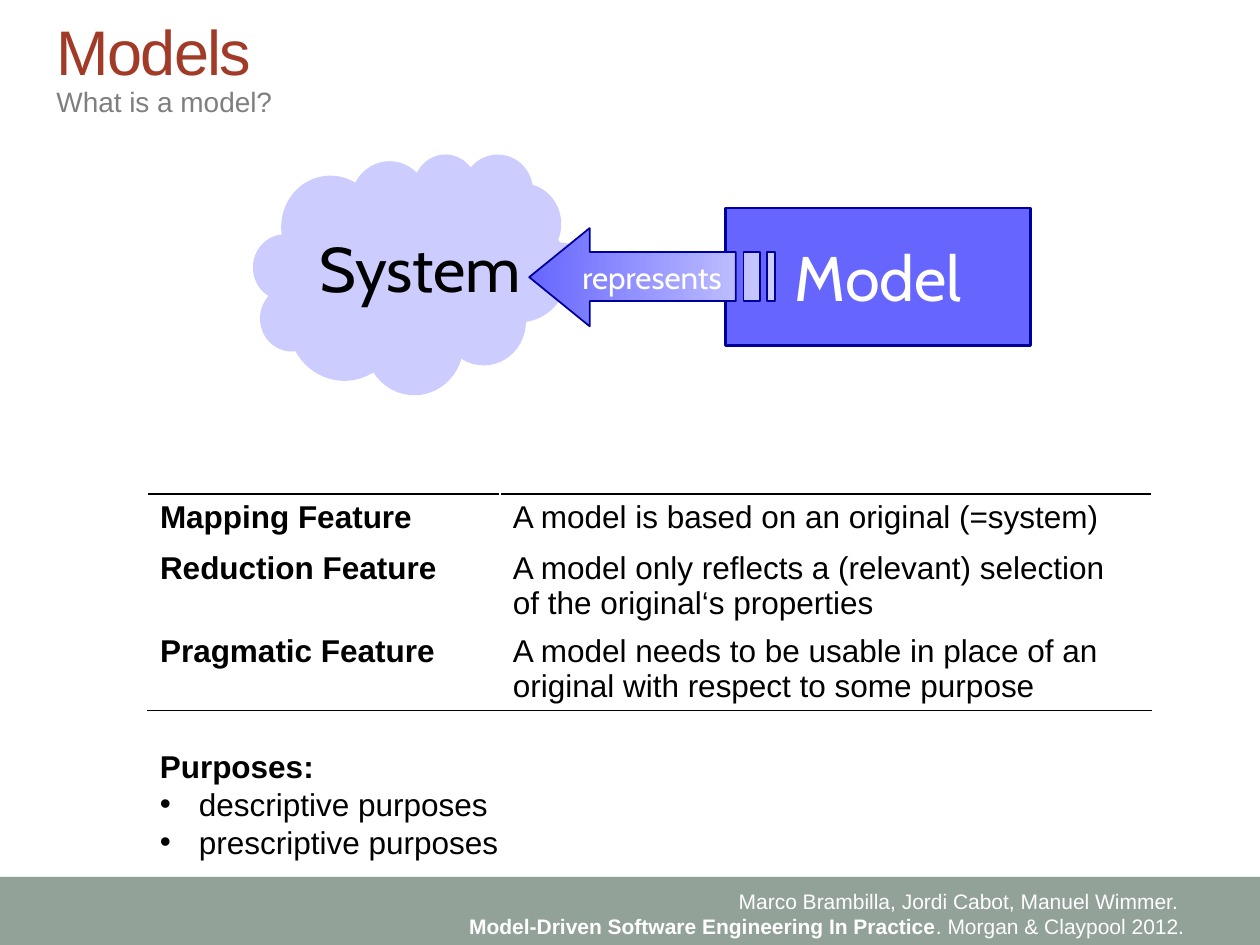
from lxml import etree
from pptx import Presentation
from pptx import util as u
from pptx.dml.color import RGBColor
from pptx.enum import shapes, text
from pptx.oxml.ns import qn

LEFT, CENTER, RIGHT = text.PP_ALIGN.LEFT, text.PP_ALIGN.CENTER, text.PP_ALIGN.RIGHT
TOP, MIDDLE = text.MSO_ANCHOR.TOP, text.MSO_ANCHOR.MIDDLE

TITLE = "Models"
SUBTITLE = "What is a model?"
FEATURES = [
    ("Mapping Feature", "A model is based on an original (=system)"),
    ("Reduction Feature", "A model only reflects a (relevant) selection of the original‘s properties"),
    ("Pragmatic Feature", "A model needs to be usable in place of an original with respect to some purpose"),
]
COLUMN_WIDTHS = [2.8, 5.17]
ROW_HEIGHTS = [0.4, 0.66, 0.66]
PURPOSES_HEADING = "Purposes:"
PURPOSES = ["descriptive purposes", "prescriptive purposes"]
AUTHORS = "Marco Brambilla, Jordi Cabot, Manuel Wimmer. "
BOOK = "Model-Driven Software Engineering In Practice"
PUBLISHER = ". Morgan & Claypool 2012."

ARROW_HEAD = [(4.68, 1.81), (4.68, 2), (5.84, 2), (5.84, 2.39), (4.68, 2.39), (4.68, 2.59), (4.2, 2.2)]
ARROW_BARS = [(5.9, 6.03), (6.09, 6.15)]

BODY = {"name": "Arial", "size": u.Pt(18)}
FOOTER = {"name": "Arial", "size": u.Pt(12)}
LABEL = {"name": "Cabin", "size": u.Pt(36)}


def color(value):
    return RGBColor.from_string(value)


def inches(values):
    return [u.Inches(value) for value in values]


def write(paragraph, runs, style, ink, align=LEFT):
    paragraph.alignment = align
    for words, bold in runs:
        run = paragraph.add_run()
        run.text = words
        for name, value in {**style, "bold": bold}.items():
            setattr(run.font, name, value)
        run.font.color.rgb = color(ink)


def fill_frame(frame, lines, style, ink, align=LEFT, anchor=TOP, wrap=True):
    settings = {"word_wrap": wrap, "auto_size": text.MSO_AUTO_SIZE.NONE, "vertical_anchor": anchor}
    for name, value in settings.items():
        setattr(frame, name, value)
    for index, runs in enumerate(lines):
        paragraph = frame.add_paragraph() if index else frame.paragraphs[0]
        write(paragraph, runs, style, ink, align)
    return frame.paragraphs


def add_text(slide, box, *args, **options):
    return fill_frame(slide.shapes.add_textbox(*inches(box)).text_frame, *args, **options)


def paint(shape, fill=None, line=None, width=1):
    shape.shadow.inherit = False
    if fill:
        shape.fill.solid()
        shape.fill.fore_color.rgb = color(fill)
    if line:
        shape.line.color.rgb = color(line)
        shape.line.width = u.Pt(width)
    else:
        shape.line.fill.background()


def add_shape(slide, kind, box, *args):
    shape = slide.shapes.add_shape(kind, *inches(box))
    paint(shape, *args)
    return shape


def add_bullet(paragraph):
    properties = paragraph._p.get_or_add_pPr()
    properties.set("marL", str(u.Inches(0.31)))
    properties.set("indent", str(-u.Inches(0.31)))
    etree.SubElement(properties, qn("a:buFont"), typeface="Arial")
    etree.SubElement(properties, qn("a:buChar"), char="•")


def add_border(cell, side):
    properties = cell._tc.get_or_add_tcPr()
    line = etree.Element(qn("a:" + side), w=str(u.Pt(1)))
    solid = etree.SubElement(line, qn("a:solidFill"))
    etree.SubElement(solid, qn("a:srgbClr"), val="000000")
    properties.insert(0, line)


def add_header(slide):
    title = slide.shapes.title
    for name, value in zip(("left", "top", "width", "height"), inches((0.35, 0.17, 9.33, 0.46))):
        setattr(title, name, value)
    paragraphs = fill_frame(title.text_frame, [[(TITLE, False)]],
                            {"name": "Arial", "size": u.Pt(36)}, "A23A28", anchor=MIDDLE)
    paragraphs[0].runs[0].font._element.set("spc", "-100")
    add_text(slide, (0.35, 0.62, 9.33, 0.39), [[(SUBTITLE, False)]],
             {"name": "Arial", "size": u.Pt(16)}, "7F7F7F")


def add_footer(slide):
    add_shape(slide, shapes.MSO_SHAPE.RECTANGLE, (0, 6.96, 10, 0.54), "93A299")
    add_text(slide, (2.94, 7, 6.56, 0.5), [[(AUTHORS, False)], [(BOOK, True), (PUBLISHER, False)]],
             FOOTER, "FFFFFF", align=RIGHT)


def add_arrow(slide):
    bars = [[(right, 2), (right, 2.39), (left, 2.39), (left, 2)] for left, right in ARROW_BARS]
    builder = slide.shapes.build_freeform(*inches(ARROW_HEAD[0]))
    for index, outline in enumerate([ARROW_HEAD, *bars]):
        if index:
            builder.move_to(*inches(outline[0]))
        builder.add_line_segments([inches(point) for point in outline[1:]], close=True)
    arrow = builder.convert_to_shape()
    paint(arrow, line="000099")
    arrow.fill.gradient()
    arrow.fill.gradient_angle = 0
    for stop, value, position in zip(arrow.fill.gradient_stops, ("6666FF", "CCCCFF"), (0, 1)):
        stop.color.rgb = color(value)
        stop.position = position
    fill_frame(arrow.text_frame, [[("represents", False)]], {"name": "Cabin", "size": u.Pt(18)},
               "FFFFFF", align=CENTER, anchor=MIDDLE, wrap=False)


def add_diagram(slide):
    model = add_shape(slide, shapes.MSO_SHAPE.RECTANGLE, (5.76, 1.65, 2.42, 1.09), "6666FF", "000099", 1.5)
    fill_frame(model.text_frame, [[("Model", False)]], LABEL, "FFFFFF", align=CENTER, anchor=MIDDLE)
    cloud = add_shape(slide, shapes.MSO_SHAPE.CLOUD_CALLOUT, (2.01, 1.22, 2.5, 1.91), "CCCCFF")
    cloud.adjustments[0], cloud.adjustments[1] = 0.4, -0.04
    add_arrow(slide)
    system = add_text(slide, (2.39, 1.89, 1.89, 0.59), [[("System", False)]], LABEL, "000000",
                      align=CENTER, wrap=False)
    system[0].line_spacing = 0.8


def add_features(slide):
    box = (1.17, 3.92, sum(COLUMN_WIDTHS), sum(ROW_HEIGHTS))
    table = slide.shapes.add_table(len(FEATURES), len(COLUMN_WIDTHS), *inches(box)).table
    table.first_row = table.horz_banding = False
    for column, width in zip(table.columns, inches(COLUMN_WIDTHS)):
        column.width = width
    for row, height in zip(table.rows, inches(ROW_HEIGHTS)):
        row.height = height
    for row, feature in enumerate(FEATURES):
        for column, words in enumerate(feature):
            cell = table.cell(row, column)
            cell.fill.solid()
            cell.fill.fore_color.rgb = color("FFFFFF")
            write(cell.text_frame.paragraphs[0], [(words, column == 0)], BODY, "000000")
            if row == 0:
                add_border(cell, "lnT")
            if row == len(FEATURES) - 1:
                add_border(cell, "lnB")


def add_purposes(slide):
    lines = [[(PURPOSES_HEADING, True)]] + [[(purpose, False)] for purpose in PURPOSES]
    for paragraph in add_text(slide, (1.17, 5.88, 8.52, 1.01), lines, BODY, "000000")[1:]:
        add_bullet(paragraph)


def main():
    presentation = Presentation()
    presentation.slide_width, presentation.slide_height = inches((10, 7.5))
    slide = presentation.slides.add_slide(presentation.slide_layouts[5])
    for add_part in (add_footer, add_header, add_features, add_diagram, add_purposes):
        add_part(slide)
    presentation.save("out.pptx")


if __name__ == "__main__":
    main()
